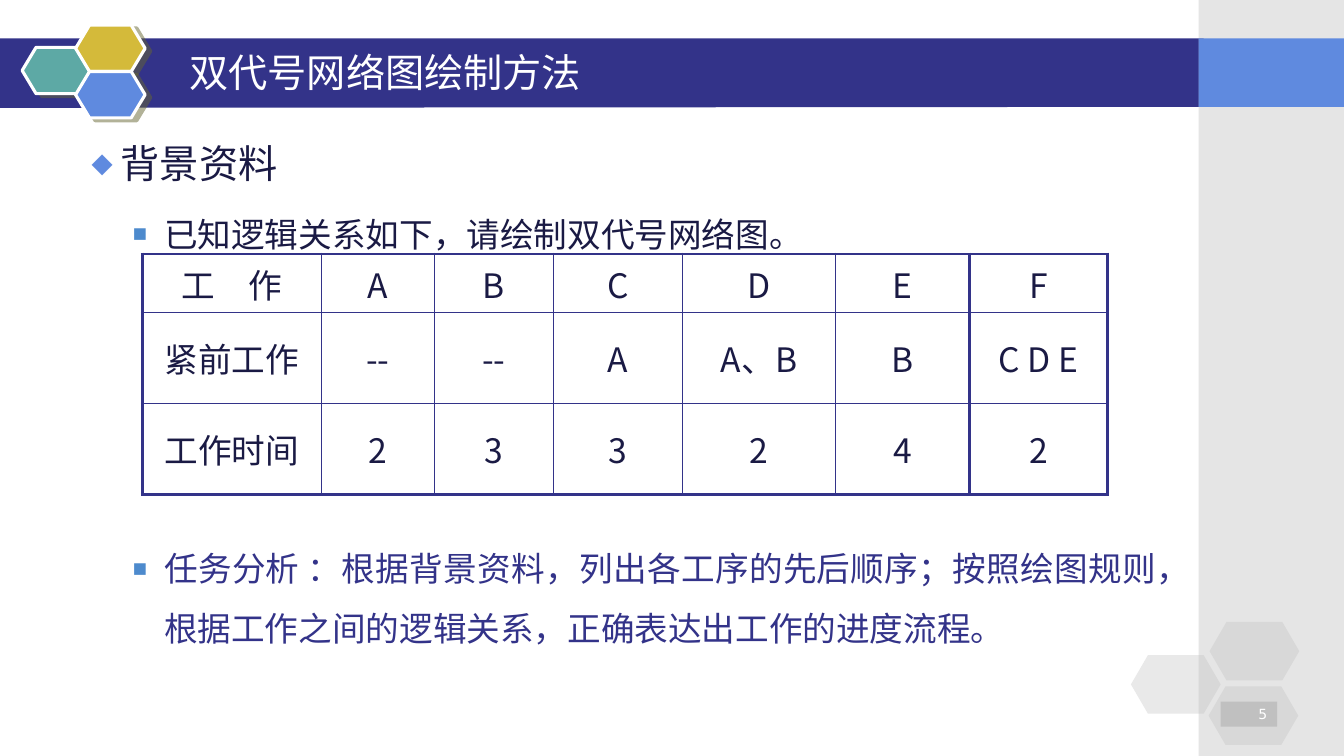
from dataclasses import dataclass

from lxml import etree
from pptx import Presentation
from pptx.dml.color import RGBColor
from pptx.enum.shapes import MSO_SHAPE
from pptx.enum.text import MSO_ANCHOR, PP_ALIGN
from pptx.oxml.ns import qn
from pptx.util import Inches, Pt

RECTANGLE, HEXAGON = MSO_SHAPE.RECTANGLE, MSO_SHAPE.HEXAGON
MIDDLE = MSO_ANCHOR.MIDDLE
LEFT, CENTER, RIGHT, JUSTIFY = PP_ALIGN.LEFT, PP_ALIGN.CENTER, PP_ALIGN.RIGHT, PP_ALIGN.JUSTIFY


@dataclass(frozen=True)
class Theme:
    navy: str = "333389"
    ink: str = "1A1A44"
    blue: str = "5F8ADF"
    bullet: str = "4D8ACD"
    teal: str = "5DA9A5"
    gold: str = "D4BA3A"
    gray: str = "C0C0C0"
    shade: str = "666633"
    white: str = "FFFFFF"
    font: str = "Noto Sans CJK SC"
    small_font: str = "DejaVu Sans"
    heading: int = 28
    body: int = 24
    small: int = 10
    thick: float = 2.25
    thin: float = 1


THEME = Theme()

# Slide grid: 160 columns by 90 rows
WIDTH, HEIGHT = Inches(13.33), Inches(7.5)
COLUMN, ROW = WIDTH / 160, HEIGHT / 90

WORK_TABLE = [
    ["工　作", "A", "B", "C", "D", "E", "F"],
    ["紧前工作", "--", "--", "A", "A、B", "B", "C D E"],
    ["工作时间", "2", "3", "3", "2", "4", "2"],
]
TABLE_COLUMNS = [21.36, 13.44, 14.16, 15.36, 18.24, 15.96, 16.44]
TABLE_ROWS = [7, 10.8, 10.8]


def place(column, row, columns, rows):
    return [round(n) for n in (column * COLUMN, row * ROW, columns * COLUMN, rows * ROW)]


def add_xml(parent, tag, **attributes):
    return etree.SubElement(parent, qn(tag), {key: str(value) for key, value in attributes.items()})


def paint(shape, color, opacity=100):
    shape.shadow.inherit = False
    shape.fill.solid()
    shape.fill.fore_color.rgb = RGBColor.from_string(color)
    shape.line.fill.background()
    if opacity < 100:
        add_xml(next(shape.element.iter(qn("a:srgbClr"))), "a:alpha", val=opacity * 1000)


def add_block(page, kind, area, color, opacity=100):
    block = page.shapes.add_shape(kind, *place(*area))
    paint(block, color, opacity)
    return block


def add_hexagon(page, area, color, opacity=100, adjust=0.29):
    hexagon = add_block(page, HEXAGON, area, color, opacity)
    hexagon.adjustments[0] = adjust
    return hexagon


def add_badge(page, area, color):
    badge = add_hexagon(page, area, color, adjust=0.3)
    badge.line.color.rgb = RGBColor.from_string(THEME.white)
    badge.line.width = Pt(THEME.thick)
    effects = badge.element.spPr.find(qn("a:effectLst"))
    shadow = add_xml(effects, "a:outerShdw", dist=Pt(4.5), dir=27 * 60000, algn="ctr", rotWithShape=0)
    tint = add_xml(shadow, "a:srgbClr", val=THEME.shade)
    add_xml(tint, "a:alpha", val=50000)


def add_band(page):
    corners = [(-0.12, 4.56), (143.28, 4.56), (143.16, 12.72), (-0.12, 12.84)]
    points = [(round(x * COLUMN), round(y * ROW)) for x, y in corners]
    builder = page.shapes.build_freeform(*points[0])
    builder.add_line_segments(points[1:], close=True)
    paint(builder.convert_to_shape(), THEME.navy)


def write(para, text, size, color, align, font=THEME.font):
    para.alignment = align
    span = para.add_run()
    span.text = text
    span.font.size = Pt(size)
    span.font.bold = False
    span.font.name = font
    span.font.color.rgb = RGBColor.from_string(color)
    add_xml(span.font._element, "a:ea", typeface=font)


def set_bullet(para, symbol, color, percent, margin, hanging):
    props = para._p.get_or_add_pPr()
    props.set("marL", str(Inches(margin)))
    props.set("indent", str(-Inches(hanging)))
    add_xml(add_xml(props, "a:buClr"), "a:srgbClr", val=color)
    add_xml(props, "a:buSzPct", val=percent * 1000)
    add_xml(props, "a:buFont", typeface=THEME.small_font)
    add_xml(props, "a:buChar", char=symbol)


def add_outline(page):
    frame = page.shapes.add_textbox(*place(8.64, 12.96, 134.28, 64.2)).text_frame
    frame.word_wrap = True
    top_level = ("◆", THEME.blue, 70, 0.38, 0.29)
    sub_level = ("■", THEME.bullet, 45, 0.81, 0.31)
    # Text, size, colour, line height, space before, bullet
    items = [
        ("背景资料", THEME.heading, THEME.ink, 52, 0, top_level),
        ("已知逻辑关系如下，请绘制双代号网络图。", THEME.body, THEME.ink, 43, 5, sub_level),
        ("任务分析 ：根据背景资料，列出各工序的先后顺序；按照绘图规则，"
         "根据工作之间的逻辑关系，正确表达出工作的进度流程。",
         THEME.body, THEME.navy, 43, 196, sub_level),
    ]
    for index, (text, size, color, height, before, bullet) in enumerate(items):
        para = frame.add_paragraph() if index else frame.paragraphs[0]
        write(para, text, size, color, JUSTIFY)
        para.line_spacing = Pt(height)
        para.space_before = Pt(before)
        set_bullet(para, *bullet)


def set_borders(cell, widths):
    props = cell._tc.get_or_add_tcPr()
    for index, (side, width) in enumerate(widths.items()):
        line = etree.Element(qn(f"a:ln{side}"), {"w": str(Pt(width))})
        add_xml(add_xml(line, "a:solidFill"), "a:srgbClr", val=THEME.navy)
        props.insert(index, line)


def add_work_table(page):
    rows, columns = len(TABLE_ROWS), len(TABLE_COLUMNS)
    area = place(16.92, 30.24, sum(TABLE_COLUMNS), sum(TABLE_ROWS))
    table = page.shapes.add_table(rows, columns, *area).table
    table.first_row = table.horz_banding = False
    for column, share in zip(table.columns, TABLE_COLUMNS):
        column.width = round(share * COLUMN)
    for row, share in zip(table.rows, TABLE_ROWS):
        row.height = round(share * ROW)
    # The frame and the rule before the last column are thick
    thick_columns, thick_rows = {0, columns - 1, columns}, {0, rows}
    for r, texts in enumerate(WORK_TABLE):
        for c, text in enumerate(texts):
            cell = table.cell(r, c)
            cell.fill.background()
            cell.vertical_anchor = MIDDLE
            write(cell.text_frame.paragraphs[0], text, THEME.body, THEME.ink, CENTER)
            edges = {"L": c in thick_columns, "R": c + 1 in thick_columns,
                     "T": r in thick_rows, "B": r + 1 in thick_rows}
            set_borders(cell, {side: THEME.thick if thick else THEME.thin
                               for side, thick in edges.items()})


def set_title(page, text):
    title = page.shapes.title
    title.left, title.top, title.width, title.height = place(21.36, 5.04, 116.04, 6.96)
    title.text_frame.vertical_anchor = MIDDLE
    write(title.text_frame.paragraphs[0], text, THEME.heading, THEME.white, LEFT)
    title.element.getparent().append(title.element)


def add_page_number(page, number):
    box = add_block(page, RECTANGLE, (145.32, 83.52, 6.72, 3), THEME.gray)
    box.text_frame.vertical_anchor = MIDDLE
    write(box.text_frame.paragraphs[0], number, THEME.small, THEME.white, RIGHT, THEME.small_font)


def main():
    deck = Presentation()
    deck.slide_width, deck.slide_height = WIDTH, HEIGHT
    page = deck.slides.add_slide(deck.slide_layouts[5])

    # Header band and side panel
    add_band(page)
    add_block(page, RECTANGLE, (142.68, 0, 17.32, 90), THEME.gray, 40)
    add_block(page, RECTANGLE, (142.68, 4.56, 17.32, 8.16), THEME.blue)

    # Hexagon clusters
    for column, row, color in [(2.64, 5.64, THEME.teal), (9, 3, THEME.gold), (9, 8.52, THEME.blue)]:
        add_badge(page, (column, row, 8.28, 5.52), color)
    for column, row in [(134.64, 78), (144, 74.04), (143.88, 81.72)]:
        add_hexagon(page, (column, row, 10.68, 6.96), THEME.gray, 35)

    # Content
    add_outline(page)
    add_page_number(page, "5")
    add_work_table(page)
    set_title(page, "双代号网络图绘制方法")
    deck.save("out.pptx")


if __name__ == "__main__":
    main()
